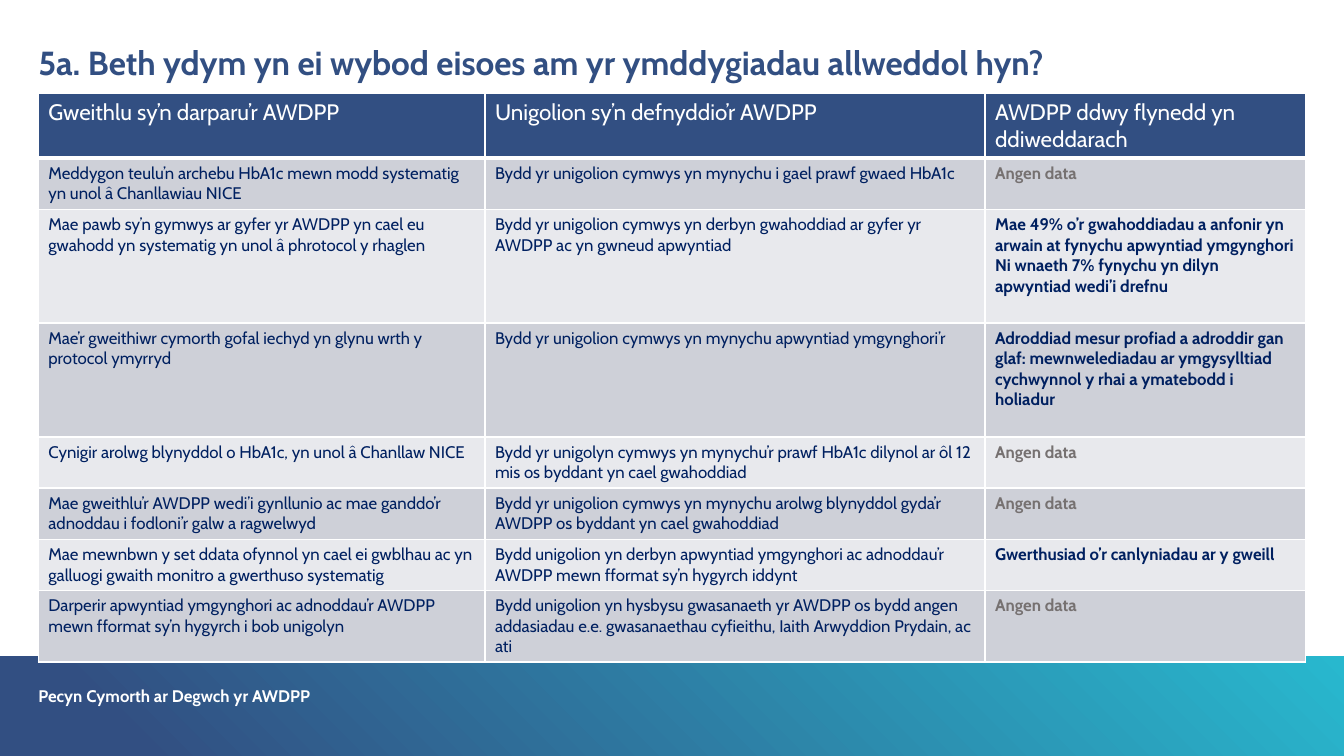
from dataclasses import dataclass

from lxml import etree
from pptx import Presentation
from pptx.dml.color import RGBColor
from pptx.enum import shapes, text
from pptx.oxml import ns
from pptx.util import Inches, Pt


@dataclass(frozen=True)
class Theme:
    font: str = "Cabin"
    blue: str = "324F82"
    teal: str = "28B8CE"
    navy: str = "002060"
    grey: str = "767171"
    white: str = "FFFFFF"
    bands: tuple[str, str] = ("CED0D8", "E8E9ED")
    title_size: float = 23.8
    header_size: float = 16
    body_size: float = 12
    border: float = 1
    header_rule: float = 3


@dataclass(frozen=True)
class Style:
    size: float
    color: str
    bold: bool = False


@dataclass(frozen=True)
class Label:
    wording: str
    left: float
    top: float
    width: float
    height: float
    style: Style
    line_spacing: float


@dataclass(frozen=True)
class Behaviour:
    workforce: str
    individuals: str
    evidence: tuple[str, ...]
    height: float = 0.5


THEME = Theme()
HEADING = Style(THEME.header_size, THEME.white)
STATEMENT = Style(THEME.body_size, THEME.navy)
FINDING = Style(THEME.body_size, THEME.navy, True)
MISSING = Style(THEME.body_size, THEME.grey, True)

DATA_NEEDED = ("Angen data",)
COLUMN_WIDTHS = (4.43, 4.96, 3.18)
HEADER_HEIGHT = 0.56
HEADINGS = (
    "Gweithlu sy’n darparu’r AWDPP",
    "Unigolion sy’n defnyddio’r AWDPP",
    "AWDPP ddwy flynedd yn ddiweddarach",
)
BEHAVIOURS = (
    Behaviour(
        "Meddygon teulu’n archebu HbA1c mewn modd systematig yn unol â Chanllawiau NICE",
        "Bydd yr unigolion cymwys yn mynychu i gael prawf gwaed HbA1c",
        DATA_NEEDED,
    ),
    Behaviour(
        "Mae pawb sy’n gymwys ar gyfer yr AWDPP yn cael eu gwahodd yn systematig yn unol â phrotocol y rhaglen",
        "Bydd yr unigolion cymwys yn derbyn gwahoddiad ar gyfer yr AWDPP ac yn gwneud apwyntiad",
        (
            "Mae 49% o’r gwahoddiadau a anfonir yn arwain at fynychu apwyntiad ymgynghori",
            "Ni wnaeth 7% fynychu yn dilyn apwyntiad wedi’i drefnu",
        ),
        1.13,
    ),
    Behaviour(
        "Mae’r gweithiwr cymorth gofal iechyd yn glynu wrth y protocol ymyrryd",
        "Bydd yr unigolion cymwys yn mynychu apwyntiad ymgynghori’r",
        (
            "Adroddiad mesur profiad a adroddir gan glaf: mewnwelediadau ar "
            "ymgysylltiad cychwynnol y rhai a ymatebodd i holiadur",
        ),
        1.13,
    ),
    Behaviour(
        "Cynigir arolwg blynyddol o HbA1c, yn unol â Chanllaw NICE",
        "Bydd yr unigolyn cymwys yn mynychu’r prawf HbA1c dilynol ar ôl 12 mis os byddant yn cael gwahoddiad",
        DATA_NEEDED,
    ),
    Behaviour(
        "Mae gweithlu’r AWDPP wedi’i gynllunio ac mae ganddo’r adnoddau i fodloni’r galw a ragwelwyd",
        "Bydd yr unigolion cymwys yn mynychu arolwg blynyddol gyda’r AWDPP os byddant yn cael gwahoddiad",
        DATA_NEEDED,
    ),
    Behaviour(
        "Mae mewnbwn y set ddata ofynnol yn cael ei gwblhau ac yn galluogi gwaith monitro a gwerthuso systematig",
        "Bydd unigolion yn derbyn apwyntiad ymgynghori ac adnoddau’r AWDPP mewn fformat sy’n hygyrch iddynt",
        ("Gwerthusiad o’r canlyniadau ar y gweill",),
    ),
    Behaviour(
        "Darperir apwyntiad ymgynghori ac adnoddau’r AWDPP mewn fformat sy’n hygyrch i bob unigolyn",
        "Bydd unigolion yn hysbysu gwasanaeth yr AWDPP os bydd angen addasiadau e.e. "
        "gwasanaethau cyfieithu, Iaith Arwyddion Prydain, ac ati",
        DATA_NEEDED,
        0.71,
    ),
)
LABELS = (
    Label(
        "5a. Beth ydym yn ei wybod eisoes am yr ymddygiadau allweddol hyn?",
        0.38, 0.5, 11.77, 0.43, Style(THEME.title_size, THEME.blue, True), 0.8,
    ),
    Label(
        "Pecyn Cymorth ar Degwch yr AWDPP",
        0.38, 6.83, 7.03, 0.18, Style(THEME.body_size, THEME.white, True), 0.9,
    ),
)


def write(frame, paragraphs: tuple[str, ...], style: Style) -> None:
    for index, wording in enumerate(paragraphs):
        paragraph = frame.add_paragraph() if index else frame.paragraphs[0]
        run = paragraph.add_run()
        run.text = wording
        run.font.name = THEME.font
        run.font.size = Pt(style.size)
        run.font.bold = style.bold
        run.font.color.rgb = RGBColor.from_string(style.color)


def draw_footer_band(slide) -> None:
    band = slide.shapes.add_shape(
        shapes.MSO_SHAPE.RECTANGLE, 0, Inches(6.51), Inches(13.33), Inches(0.99)
    )
    band.shadow.inherit = False
    band.line.fill.background()
    band.fill.gradient()
    band.fill.gradient_angle = 45
    stops = ((0.1, THEME.blue), (1, THEME.teal))
    for stop, (position, color) in zip(band.fill.gradient_stops, stops):
        stop.position = position
        stop.color.rgb = RGBColor.from_string(color)


def draw_label(slide, label: Label) -> None:
    box = slide.shapes.add_textbox(
        *map(Inches, (label.left, label.top, label.width, label.height))
    )
    frame = box.text_frame
    frame.word_wrap = True
    frame.vertical_anchor = text.MSO_ANCHOR.TOP
    frame.margin_left = frame.margin_right = frame.margin_top = frame.margin_bottom = 0
    write(frame, (label.wording,), label.style)
    frame.paragraphs[0].line_spacing = label.line_spacing


def fill_cell(cell, paragraphs: tuple[str, ...], style: Style, fill: str, rule: float) -> None:
    properties = cell._tc.get_or_add_tcPr()
    for side in "LRTB":
        width = rule if side == "B" else THEME.border
        edge = etree.SubElement(properties, ns.qn(f"a:ln{side}"), w=str(Pt(width)))
        solid = etree.SubElement(edge, ns.qn("a:solidFill"))
        etree.SubElement(solid, ns.qn("a:srgbClr"), val=THEME.white)
    cell.fill.solid()
    cell.fill.fore_color.rgb = RGBColor.from_string(fill)
    write(cell.text_frame, paragraphs, style)


def draw_behaviours(slide) -> None:
    heights = (HEADER_HEIGHT, *(behaviour.height for behaviour in BEHAVIOURS))
    table = slide.shapes.add_table(
        len(heights), len(COLUMN_WIDTHS), Inches(0.38), Inches(0.93),
        Inches(sum(COLUMN_WIDTHS)), Inches(sum(heights)),
    ).table
    for column, width in zip(table.columns, COLUMN_WIDTHS):
        column.width = Inches(width)
    for row, height in zip(table.rows, heights):
        row.height = Inches(height)
    for column, heading in enumerate(HEADINGS):
        fill_cell(table.cell(0, column), (heading,), HEADING, THEME.blue, THEME.header_rule)
    for index, behaviour in enumerate(BEHAVIOURS):
        evidence_style = MISSING if behaviour.evidence == DATA_NEEDED else FINDING
        entries = (
            ((behaviour.workforce,), STATEMENT),
            ((behaviour.individuals,), STATEMENT),
            (behaviour.evidence, evidence_style),
        )
        for column, (paragraphs, style) in enumerate(entries):
            cell = table.cell(index + 1, column)
            fill_cell(cell, paragraphs, style, THEME.bands[index % 2], THEME.border)


def main() -> None:
    deck = Presentation()
    deck.slide_width, deck.slide_height = Inches(13.33), Inches(7.5)
    slide = deck.slides.add_slide(deck.slide_layouts[6])
    draw_footer_band(slide)
    draw_behaviours(slide)
    for label in LABELS:
        draw_label(slide, label)
    deck.save("out.pptx")


if __name__ == "__main__":
    main()
